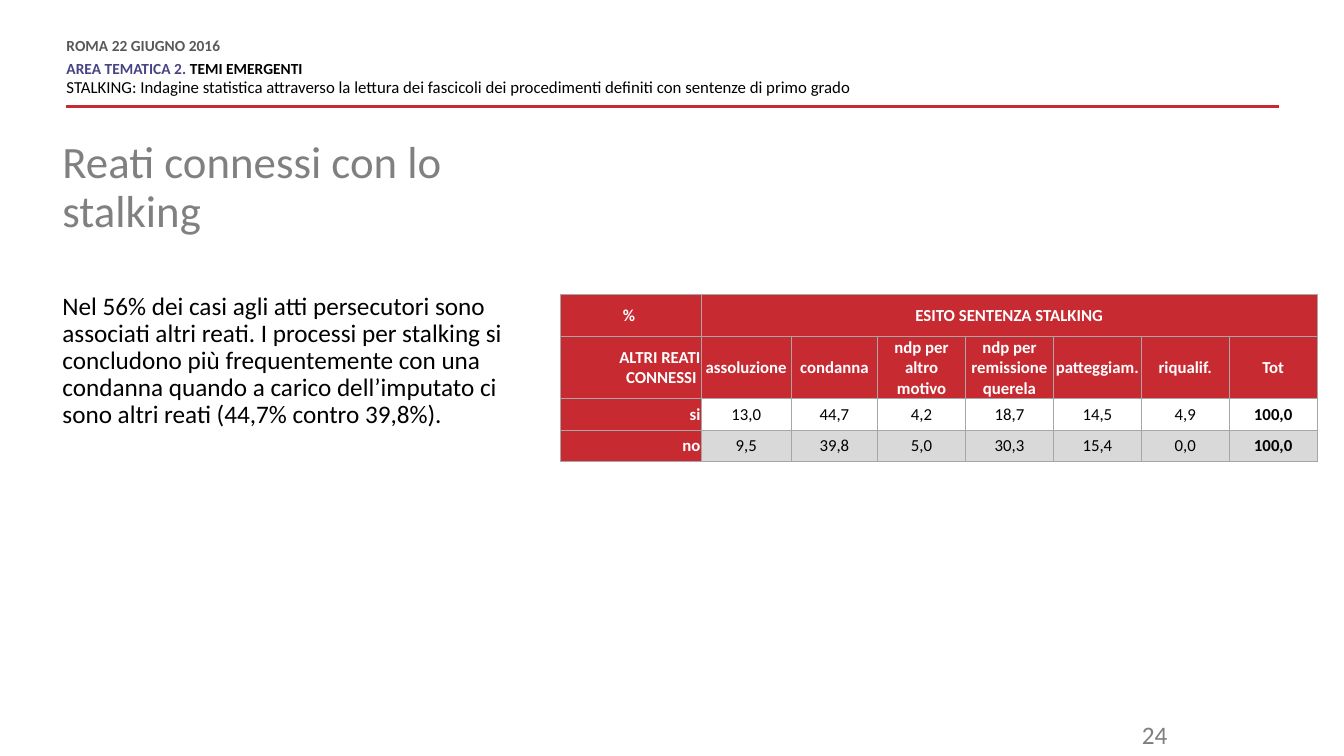
from dataclasses import dataclass
from typing import Optional
from lxml.etree import SubElement
from pptx import Presentation
from pptx.dml.color import RGBColor
from pptx.enum.shapes import MSO_CONNECTOR
from pptx.enum.text import MSO_ANCHOR, MSO_AUTO_SIZE, PP_ALIGN
from pptx.oxml.ns import qn
from pptx.util import Pt

HUES = {
    "red": "C72A31",
    "dark": "595959",
    "blue": "484384",
    "black": "000000",
    "white": "FFFFFF",
    "title": "808080",
    "page": "7F7F7F",
    "edge": "A6A6A6",
    "band": "D9D9D9",
}


@dataclass
class Run:
    text: str
    size: float
    hue: str
    bold: bool = False


@dataclass
class Para:
    runs: list[Run]
    align: PP_ALIGN = PP_ALIGN.LEFT
    line: Optional[float] = None
    before: float = 0
    after: float = 0


@dataclass
class Box:
    left: float
    top: float
    width: float
    height: float


def tint(name: str) -> RGBColor:
    return RGBColor.from_string(HUES[name])


def write(frame, paras: list[Para]) -> None:
    for pos, para in enumerate(paras):
        p = frame.paragraphs[0] if pos == 0 else frame.add_paragraph()
        props = p._p.get_or_add_pPr()
        props.set("marL", "0")
        props.set("indent", "0")
        SubElement(props, qn("a:buNone"))
        p.alignment = para.align
        p.space_before, p.space_after = Pt(para.before), Pt(para.after)
        if para.line:
            p.line_spacing = para.line if para.line < 3 else Pt(para.line)
        for item in para.runs:
            run = p.add_run()
            run.text = item.text
            run.font.name = "Calibri"
            run.font.size = Pt(item.size)
            run.font.bold = item.bold
            run.font.color.rgb = tint(item.hue)


def fill(shape, box: Box, paras: list[Para], inset: bool = False) -> None:
    shape.left, shape.top = Pt(box.left), Pt(box.top)
    shape.width, shape.height = Pt(box.width), Pt(box.height)
    frame = shape.text_frame
    frame.word_wrap = True
    frame.auto_size = MSO_AUTO_SIZE.NONE
    frame.vertical_anchor = MSO_ANCHOR.TOP
    if not inset:
        frame.margin_left = frame.margin_right = Pt(0)
        frame.margin_top = frame.margin_bottom = Pt(0)
    write(frame, paras)


def text(slide, box: Box, paras: list[Para], inset: bool = False) -> None:
    fill(slide.shapes.add_textbox(0, 0, 0, 0), box, paras, inset)


def rule(slide, left: float, right: float, top: float) -> None:
    line = slide.shapes.add_connector(
        MSO_CONNECTOR.STRAIGHT, Pt(right), Pt(top), Pt(left), Pt(top))
    line.line.color.rgb = tint("red")
    line.line.width = Pt(2)
    SubElement(line._element.spPr, qn("a:effectLst"))


def edge(cell) -> None:
    props = cell._tc.get_or_add_tcPr()
    for pos, side in enumerate(("lnL", "lnR", "lnT", "lnB")):
        line = props.makeelement(qn("a:" + side), {"w": str(Pt(0.75))})
        solid = SubElement(line, qn("a:solidFill"))
        SubElement(solid, qn("a:srgbClr"), val=HUES["edge"])
        props.insert(pos, line)


def grid(slide, box: Box, cols: list[float], rows: list[float],
         data: list[list[str]]) -> None:
    table = slide.shapes.add_table(
        len(rows), len(cols), Pt(box.left), Pt(box.top),
        Pt(box.width), Pt(box.height)).table
    table.first_row = table.horz_banding = False
    for col, width in zip(table.columns, cols):
        col.width = Pt(width)
    for row, height in zip(table.rows, rows):
        row.height = Pt(height)
    table.cell(0, 1).merge(table.cell(0, len(cols) - 1))
    for r, line in enumerate(data):
        for c, word in enumerate(line):
            cell = table.cell(r, c)
            head = r < 2 or c == 0
            cell.fill.solid()
            cell.fill.fore_color.rgb = tint(
                "red" if head else "white" if r == 2 else "band")
            edge(cell)
            cell.vertical_anchor = MSO_ANCHOR.MIDDLE
            cell.margin_left = cell.margin_right = cell.margin_top = Pt(0.7)
            cell.margin_bottom = Pt(0)
            if word:
                bold = head or c == len(cols) - 1
                align = PP_ALIGN.RIGHT if r and c == 0 else PP_ALIGN.CENTER
                hue = "white" if head else "black"
                write(cell.text_frame, [Para([Run(word, 12, hue, bold)], align)])


def main() -> None:
    deck = Presentation()
    deck.slide_width, deck.slide_height = Pt(960), Pt(540)
    slide = deck.slides.add_slide(deck.slide_layouts[1])

    rule(slide, 47.5, 913.7, 76.3)
    text(slide, Box(47.5, 28.1, 600.5, 42.5), [
        Para([Run("ROMA 22 GIUGNO 2016", 11, "dark", True)], line=10.8, after=6),
        Para([Run("AREA TEMATICA 2. ", 11, "blue", True),
              Run("TEMI EMERGENTI", 11, "black", True)], line=10.8),
        Para([Run("STALKING: Indagine statistica attraverso la lettura dei "
                  "fascicoli dei procedimenti definiti con sentenze di primo "
                  "grado", 12, "black")], line=10.8, before=3, after=6),
    ])
    text(slide, Box(756, 510.5, 85, 25.2),
         [Para([Run("24", 18, "page")], PP_ALIGN.RIGHT)], True)

    fill(slide.shapes.title, Box(44.6, 100.1, 338.4, 81.4),
         [Para([Run("Reati connessi con lo stalking", 32, "title")], line=0.9)])
    fill(slide.placeholders[1], Box(44.6, 209.5, 320.4, 240.5), [
        Para([Run("Nel 56% dei casi agli atti persecutori sono associati altri "
                  "reati. I processi per stalking si concludono più "
                  "frequentemente con una condanna quando a carico "
                  "dell’imputato ci sono altri reati (44,7% contro 39,8%).",
                  18, "black")], line=0.9)])

    grid(slide, Box(400.2, 210, 540.7, 119.3),
         [100.8, 64.1, 61.8] + [62.8] * 5, [30.2, 44.3, 22.4, 22.4], [
        ["% ", "ESITO SENTENZA STALKING"] + [""] * 6,
        ["ALTRI REATI CONNESSI ", "assoluzione", "condanna",
         "ndp per altro motivo", "ndp per remissione querela",
         "patteggiam.", "riqualif.", "Tot"],
        ["si", "13,0", "44,7", "4,2", "18,7", "14,5", "4,9", "100,0"],
        ["no", "9,5", "39,8", "5,0", "30,3", "15,4", "0,0", "100,0"],
    ])
    deck.save("out.pptx")


if __name__ == "__main__":
    main()
